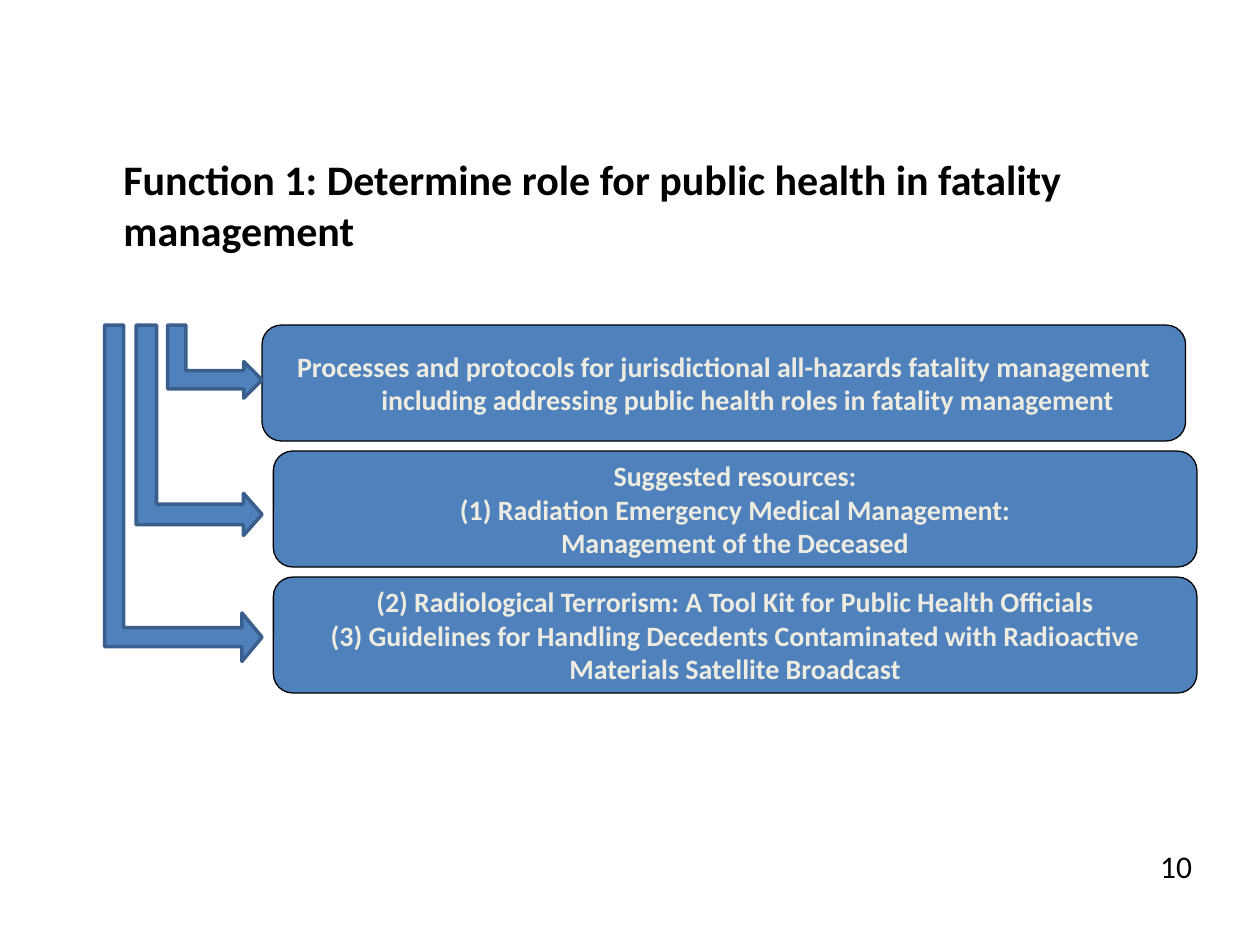
from pptx import Presentation
from pptx.dml.color import RGBColor
from pptx.enum.shapes import MSO_SHAPE as Preset
from pptx.enum.text import MSO_ANCHOR as Anchor, PP_ALIGN as Align
from pptx.util import Inches, Pt

BLUE, EDGE, BLACK, CREAM = "4F81BD", "3A5F8C", "000000", "EEECE1"
HANG = Inches(0.38)


def format_text(frame, size, color, bold, align):
    frame.word_wrap = True
    for para in frame.paragraphs:
        para.alignment = align
        for span in para.runs:
            span.font.name = "Calibri"
            span.font.size = Pt(size)
            span.font.bold = bold
            span.font.color.rgb = RGBColor.from_string(color)


def add_blue_shape(preset, left, top, width, height, line_color, line_width):
    shape = page.shapes.add_shape(
        preset, Inches(left), Inches(top), Inches(width), Inches(height))
    shape.shadow.inherit = False
    shape.fill.solid()
    shape.fill.fore_color.rgb = RGBColor.from_string(BLUE)
    shape.line.color.rgb = RGBColor.from_string(line_color)
    shape.line.width = Pt(line_width)
    return shape


deck = Presentation()
deck.slide_width, deck.slide_height = Inches(10), Inches(7.5)
page = deck.slides.add_slide(deck.slide_layouts[5])

# Heading
title = page.shapes.title
title.left, title.top = Inches(0.5), Inches(1.17)
title.width, title.height = Inches(9), Inches(0.92)
heading = title.text_frame
heading.text = "Function 1: Determine role for public health in fatality management"
heading.vertical_anchor = Anchor.TOP
heading.paragraphs[0]._p.get_or_add_pPr().set("marL", str(HANG))
format_text(heading, 24, BLACK, True, Align.LEFT)

# Boxes, one inch apart
boxes = [
    (2.08, ["Processes and protocols for jurisdictional all-hazards fatality management "
            "including addressing public health roles in fatality management"]),
    (2.17, ["Suggested resources:",
            "(1) Radiation Emergency Medical Management:",
            "Management of the Deceased"]),
    (2.17, ["(2) Radiological Terrorism: A Tool Kit for Public Health Officials",
            "(3) Guidelines for Handling Decedents Contaminated with Radioactive "
            "Materials Satellite Broadcast"]),
]
first_top = 2.58
for row, (left, lines) in enumerate(boxes):
    box = add_blue_shape(Preset.ROUNDED_RECTANGLE, left, first_top + row, 7.33, 0.92, BLACK, 0.75)
    frame = box.text_frame
    frame.text = "\n".join(lines)
    frame.vertical_anchor = Anchor.MIDDLE
    format_text(frame, 16, CREAM, True, Align.CENTER)
    if row == 0:
        hanging = frame.paragraphs[0]._p.get_or_add_pPr()
        hanging.set("marL", str(HANG))
        hanging.set("indent", str(-HANG))

# Arrows share their top and their tip; each is turned a quarter about its centre
tip = 2.08
arrows = [
    (0.75, 0.58, (0.25, 0.25, 0.25)),
    (1.00, 1.67, (0.162, 0.167, 0.148)),
    (1.25, 2.67, (0.121, 0.154, 0.128)),
]
for reach, drop, adjustments in arrows:
    left = tip - (reach + drop) / 2
    top = first_top + (drop - reach) / 2
    arrow = add_blue_shape(Preset.BENT_UP_ARROW, left, top, drop, reach, EDGE, 2)
    arrow.rotation = 90
    for index, value in enumerate(adjustments):
        arrow.adjustments[index] = value

# Page number
number = page.shapes.add_textbox(Inches(9), Inches(6.67), Inches(0.67), Inches(0.4))
number.text_frame.text = "10"
format_text(number.text_frame, 18, BLACK, False, Align.CENTER)

deck.save("out.pptx")
